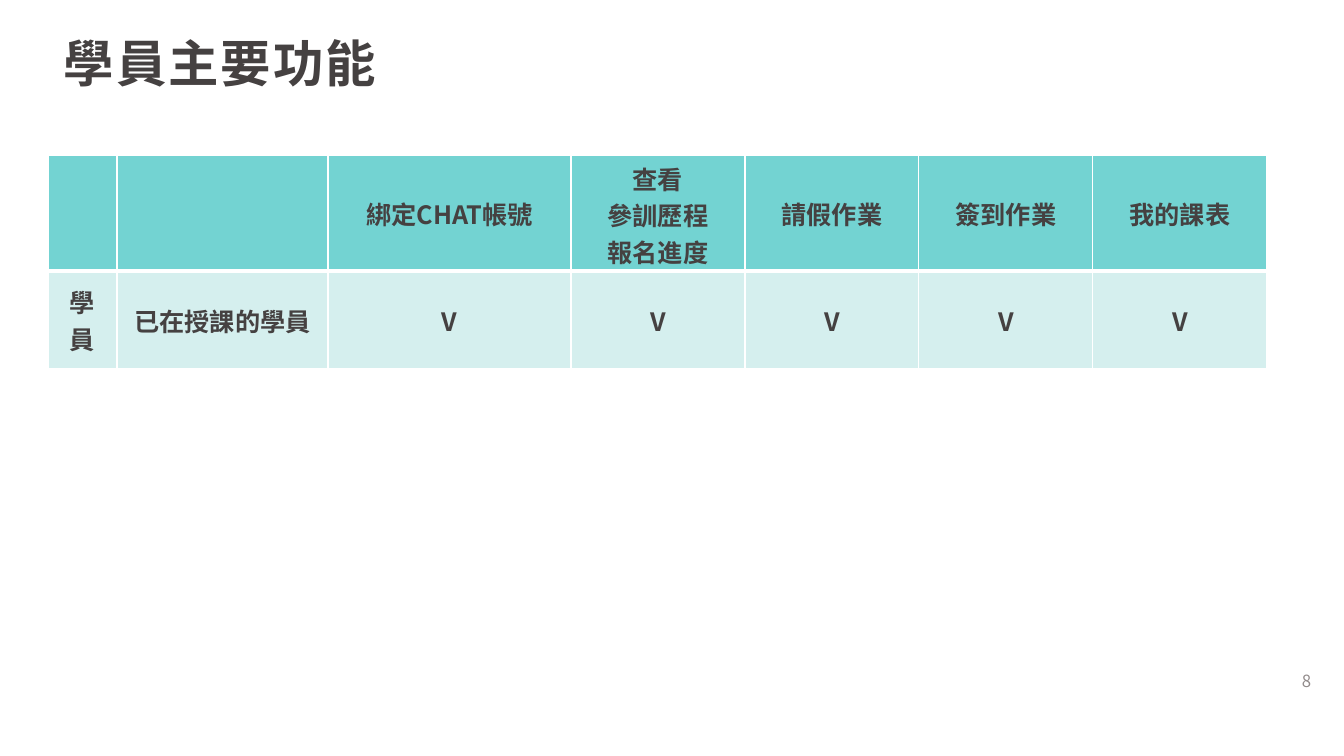
from lxml.etree import SubElement
from pptx import Presentation
from pptx.dml.color import RGBColor
from pptx.enum.text import MSO_ANCHOR as ANCHOR, PP_ALIGN as ALIGN
from pptx.oxml import parse_xml
from pptx.oxml.ns import nsdecls, qn
from pptx.util import Pt

PX = 914400 / 100.8
FONT = "Noto Sans CJK SC"
INK, GREY, WHITE = "454141", "928B8B", "FFFFFF"
HEAD, BODY = "73D3D2", "D5EFEE"


def px(n):
    return round(n * PX)


def color(value):
    return RGBColor.from_string(value)


class Deck:
    def __init__(self, w, h):
        self.prs = Presentation()
        self.prs.slide_width, self.prs.slide_height = px(w), px(h)
        self.slide = self.prs.slides.add_slide(self.prs.slide_layouts[6])

    def fill_text(self, tf, text, align, size=18, bold=True, ink=INK, line=None, spacing=None):
        tf.word_wrap = True
        for i, content in enumerate(text.split("\n")):
            p = tf.add_paragraph() if i else tf.paragraphs[0]
            p.text = content
            p.alignment = align
            if line:
                p.line_spacing = line
            for r in p.runs:
                style = {"name": FONT, "size": Pt(size), "bold": bold}
                for key, value in style.items():
                    setattr(r.font, key, value)
                r.font.color.rgb = color(ink)
                rPr = r._r.get_or_add_rPr()
                SubElement(rPr, qn("a:ea"), typeface=FONT)
                if spacing:
                    rPr.set("spc", str(round(spacing * 100)))

    def text(self, box, text, align, **style):
        tf = self.slide.shapes.add_textbox(*map(px, box)).text_frame
        tf.vertical_anchor = ANCHOR.MIDDLE
        self.fill_text(tf, text, align, **style)

    def borders(self, cell, widths):
        tcPr = cell._tc.get_or_add_tcPr()
        for i, (side, width) in enumerate(widths.items()):
            tcPr.insert(i, parse_xml(
                f'<a:ln{side} {nsdecls("a")} w="{int(Pt(width))}"><a:solidFill>'
                f'<a:srgbClr val="{WHITE}"/></a:solidFill></a:ln{side}>'))

    def table(self, x, y, widths, heights, rows, fills):
        box = map(px, (x, y, sum(widths), sum(heights)))
        tbl = self.slide.shapes.add_table(len(rows), len(widths), *box).table
        tbl.horz_banding = False
        for col, w in zip(tbl.columns, widths):
            col.width = px(w)
        for i, (row, h) in enumerate(zip(tbl.rows, heights)):
            row.height = px(h)
            for cell, content in zip(row.cells, rows[i]):
                cell.fill.solid()
                cell.fill.fore_color.rgb = color(fills[i])
                cell.vertical_anchor = ANCHOR.MIDDLE
                # Thick rule between header and body
                self.borders(cell, {"L": 1, "R": 1, "T": 3 if i else 1, "B": 1 if i else 3})
                if content:
                    self.fill_text(cell.text_frame, content, ALIGN.CENTER)


def main():
    deck = Deck(1344, 756)

    # Title
    deck.text((-65, 0, 570, 132), "學員主要功能", ALIGN.CENTER, size=36, line=0.9, spacing=1.5)

    # Feature table
    features = ["綁定CHAT帳號", "查看\n參訓歷程\v報名進度", "請假作業", "簽到作業", "我的課表"]
    rows = [["", ""] + features,
            ["學員", "已在授課的學員"] + ["V"] * len(features)]
    deck.table(48, 155, [69, 211, 243] + [174] * 4, [116, 98], rows, [HEAD, BODY])

    # Page number
    deck.text((950, 661, 371, 40), "8", ALIGN.RIGHT, size=12, bold=False, ink=GREY)

    deck.prs.save("out.pptx")


if __name__ == "__main__":
    main()
